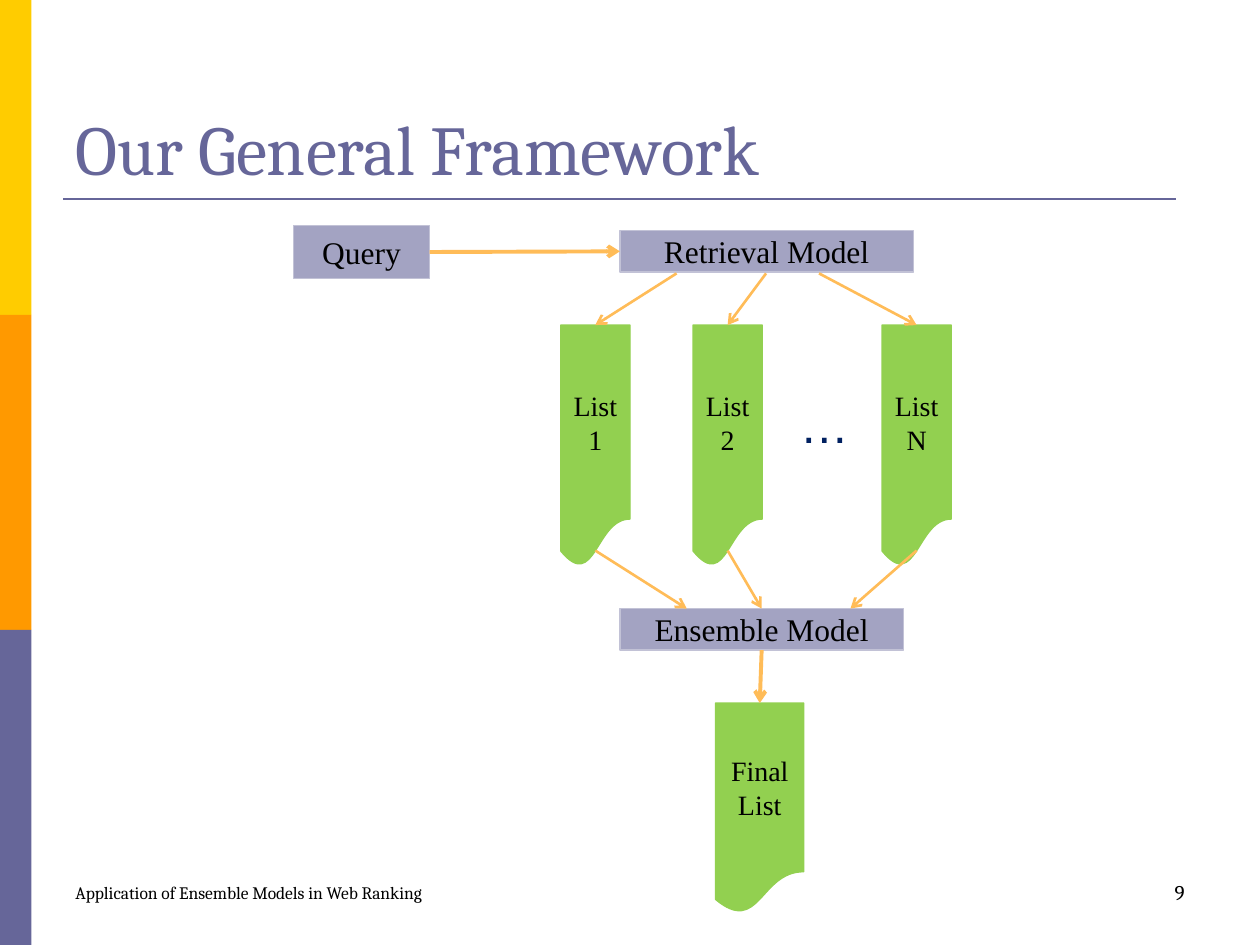
from dataclasses import dataclass
from typing import Optional

from lxml.etree import SubElement
from pptx import Presentation
from pptx.dml.color import RGBColor
from pptx.enum.shapes import MSO_CONNECTOR, MSO_SHAPE
from pptx.enum.text import MSO_ANCHOR, PP_ALIGN
from pptx.oxml.ns import qn
from pptx.util import Inches, Pt

COLORS = {
    "yellow": "FFCC00", "orange": "FF9900", "purple": "666699",
    "model": "A3A3C2", "model_line": "C2C2D6", "list": "92D050",
    "arrow": "FFBC58", "navy": "002060", "black": "000000",
}
TOP, LEFT, BOTTOM, RIGHT = range(4)


@dataclass
class Box:
    x: float
    y: float
    w: float
    h: float
    lines: tuple = ()
    size: int = 18
    fill: str = "model"
    line: Optional[str] = "model_line"
    kind: MSO_SHAPE = MSO_SHAPE.RECTANGLE


@dataclass
class Label:
    x: float
    y: float
    w: float
    h: float
    text: str
    size: int
    font: str = "Cambria"
    color: str = "black"
    anchor: MSO_ANCHOR = MSO_ANCHOR.MIDDLE
    align: PP_ALIGN = PP_ALIGN.LEFT
    wrap: bool = True


@dataclass
class Link:
    start: tuple
    end: tuple
    width: float = 1.5
    begin: Optional[tuple] = None
    finish: Optional[tuple] = None


def rgb(name: str) -> RGBColor:
    return RGBColor.from_string(COLORS[name])


def add_run(p, text: str, size: int, font: str, color: str) -> None:
    r = p.add_run()
    r.text = text
    r.font.size = Pt(size)
    r.font.name = font
    r.font.color.rgb = rgb(color)


def add_box(s, box: Box):
    sp = s.shapes.add_shape(box.kind, *map(Inches, (box.x, box.y, box.w, box.h)))
    sp.shadow.inherit = False
    sp.fill.solid()
    sp.fill.fore_color.rgb = rgb(box.fill)
    if box.line:
        sp.line.color.rgb = rgb(box.line)
        sp.line.width = Pt(0.75)
    else:
        sp.line.fill.background()
    tf = sp.text_frame
    tf.word_wrap = True
    tf.vertical_anchor = MSO_ANCHOR.MIDDLE
    tf.margin_left = tf.margin_right = Inches(0.08)
    for i, text in enumerate(box.lines):
        p = tf.add_paragraph() if i else tf.paragraphs[0]
        p.alignment = PP_ALIGN.CENTER
        add_run(p, text, box.size, "Times New Roman", "black")
    return sp


def add_label(s, label: Label) -> None:
    tb = s.shapes.add_textbox(*map(Inches, (label.x, label.y, label.w, label.h)))
    tf = tb.text_frame
    tf.word_wrap = label.wrap
    tf.vertical_anchor = label.anchor
    p = tf.paragraphs[0]
    p.alignment = label.align
    add_run(p, label.text, label.size, label.font, label.color)


def add_link(s, link: Link, color: str = "arrow", arrow: bool = True) -> None:
    cx = s.shapes.add_connector(
        MSO_CONNECTOR.STRAIGHT, *map(Inches, link.start + link.end))
    if link.begin:
        cx.begin_connect(*link.begin)
    if link.finish:
        cx.end_connect(*link.finish)
    cx.line.color.rgb = rgb(color)
    cx.line.width = Pt(link.width)
    if arrow:
        SubElement(cx.line._get_or_add_ln(), qn("a:tailEnd"), type="arrow")
    SubElement(cx._element.spPr, qn("a:effectLst"))


def document(x: float, y: float, w: float, h: float, text: str) -> Box:
    return Box(x, y, w, h, (text,), 16, "list", "list", MSO_SHAPE.FLOWCHART_DOCUMENT)


def main() -> None:
    prs = Presentation()
    prs.slide_width, prs.slide_height = Inches(10), Inches(7.5)
    s = prs.slides.add_slide(prs.slide_layouts[6])

    for i, color in enumerate(("yellow", "orange", "purple")):
        add_box(s, Box(0, 2.5 * i, 0.25, 2.5, fill=color, line=None))
    add_link(s, Link((0.5, 1.58), (9.33, 1.58)), "purple", arrow=False)

    for label in (
        Label(0.5, 0.3, 9, 1.25, "Our General Framework", 40,
              color="purple", anchor=MSO_ANCHOR.BOTTOM),
        Label(0.5, 6.83, 4.25, 0.5, "Application of Ensemble Models in Web Ranking", 10),
        Label(7.17, 6.83, 2.33, 0.5, "9", 12, align=PP_ALIGN.RIGHT),
        Label(6.25, 3.08, 0.59, 0.57, "…", 28, "Arial", "navy",
              MSO_ANCHOR.TOP, wrap=False),
    ):
        add_label(s, label)

    query = add_box(s, Box(2.33, 1.79, 1.08, 0.42, ("Query",)))
    retrieval = add_box(s, Box(4.92, 1.83, 2.33, 0.33, ("Retrieval Model",)))
    ensemble = add_box(s, Box(4.92, 4.83, 2.25, 0.33, ("Ensemble Model",)))
    final = add_box(s, document(5.68, 5.58, 0.7, 1.67, "Final List"))
    lists = [add_box(s, document(x, 2.58, 0.55, 1.92, f"List {name}"))
             for x, name in ((4.45, "1"), (5.5, "2"), (7, "N"))]

    add_link(s, Link((3.42, 2), (4.92, 2), 2.25, (query, RIGHT), (retrieval, LEFT)))
    add_link(s, Link((6.04, 5.17), (6.03, 5.58), 2.25, (ensemble, BOTTOM), (final, TOP)))
    joins = (None, (ensemble, TOP), None)
    for sp, x_from, x_to, join in zip(lists, (5.37, 6.08, 6.5), (5.45, 6.04, 6.75), joins):
        middle = (sp.left + sp.width / 2) / Inches(1)
        add_link(s, Link((x_from, 2.17), (middle, 2.58), finish=(sp, TOP)))
        add_link(s, Link((middle, 4.37), (x_to, 4.83), finish=join))

    prs.save("out.pptx")


if __name__ == "__main__":
    main()
